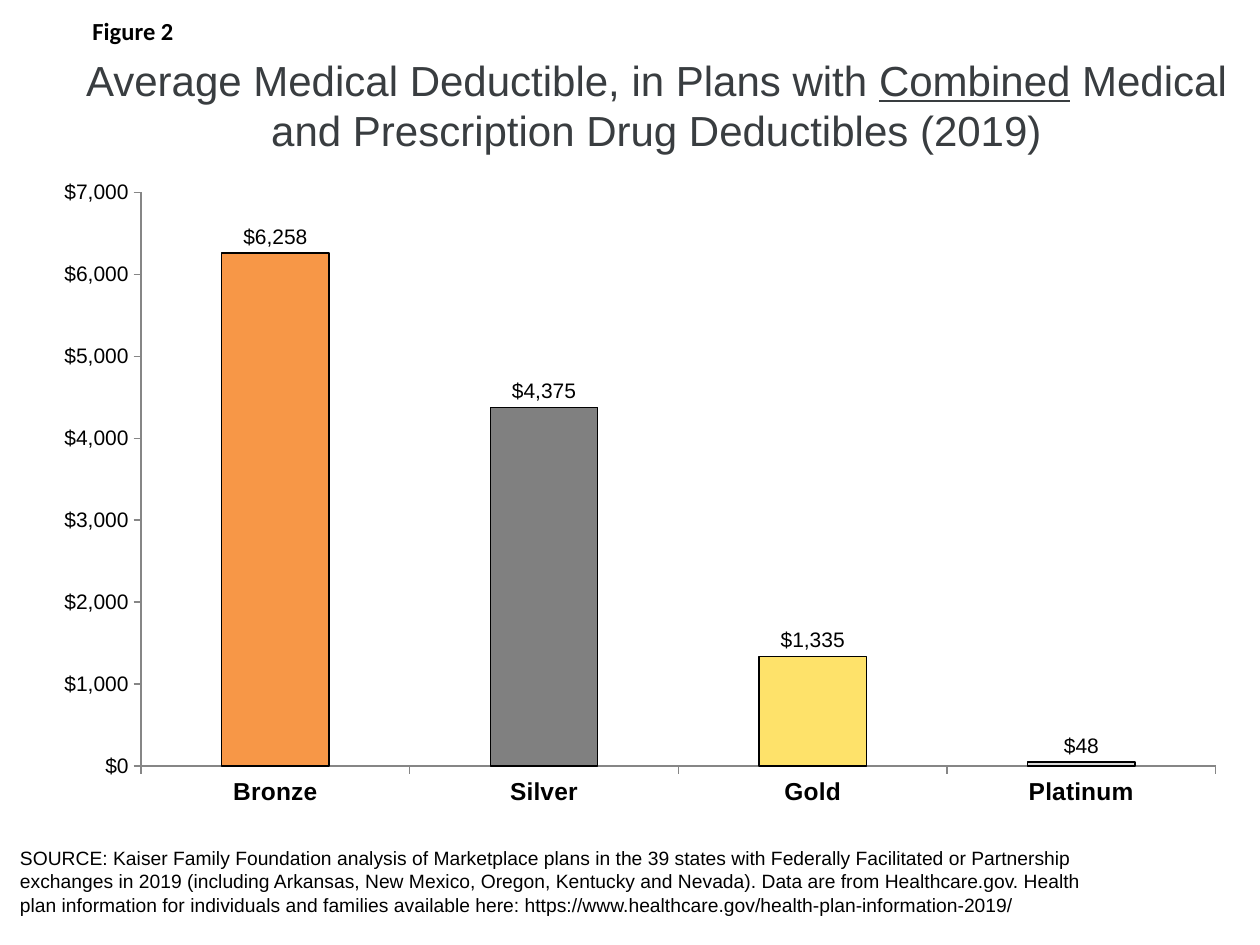
from lxml import etree
from pptx import Presentation
from pptx.chart.data import CategoryChartData as Data
from pptx.dml.color import RGBColor as RGB
from pptx.enum.chart import XL_CHART_TYPE as Kind, XL_LABEL_POSITION as Spot
from pptx.enum.chart import XL_TICK_MARK as Tick
from pptx.enum.text import MSO_ANCHOR as Anchor, PP_ALIGN as Align
from pptx.oxml.ns import qn
from pptx.util import Inches, Pt

COLORS = {"text": "000000", "title": "393D40", "axis": "868686", "bars": "082338"}
METALS = {
    "Bronze": (6258, "F79747"),
    "Silver": (4375, "808080"),
    "Gold": (1335, "FEE26A"),
    "Platinum": (48, "D9D9D9"),
}
MONEY = '"$"#,##0'


def style(font, size, color="text", name="Arial", bold=False):
    for key, value in {"size": Pt(size), "name": name, "bold": bold}.items():
        setattr(font, key, value)
    font.color.rgb = RGB.from_string(COLORS[color])


def place(shape, *box):
    for key, value in zip(("left", "top", "width", "height"), box):
        setattr(shape, key, Inches(value))


prs = Presentation()
prs.slide_width, prs.slide_height = Inches(10), Inches(7.5)
slide = prs.slides.add_slide(prs.slide_layouts[5])

title = slide.shapes.title
place(title, 0.52, 0.33, 9.38, 1)
title.text_frame.vertical_anchor = Anchor.MIDDLE
para = title.text_frame.paragraphs[0]
para.alignment = Align.CENTER
for words, under in (
    ("Average Medical Deductible, in Plans with ", False),
    ("Combined", True),
    (" Medical and Prescription Drug Deductibles (2019)", False),
):
    run = para.add_run()
    run.text = words
    style(run.font, 24, "title")
    run.font.underline = under

data = Data(number_format=MONEY)
data.categories = list(METALS)
data.add_series("Series 1", [value for value, _ in METALS.values()])
box = [Inches(n) for n in (0.33, 1.33, 9.52, 5.17)]
chart = slide.shapes.add_chart(Kind.COLUMN_CLUSTERED, *box, data).chart
chart.has_legend = chart.has_title = False
style(chart.font, 18)

for axis, size, bold in ((chart.category_axis, 14, True), (chart.value_axis, 12, False)):
    axis.has_major_gridlines = False
    axis.major_tick_mark = Tick.OUTSIDE
    axis.minor_tick_mark = Tick.NONE
    axis.format.line.color.rgb = RGB.from_string(COLORS["axis"])
    axis.format.line.width = Pt(0.75)
    style(axis.tick_labels.font, size, bold=bold)
scale = chart.value_axis
scale.minimum_scale, scale.maximum_scale, scale.major_unit = 0, 7000, 1000
scale.tick_labels.number_format = MONEY
scale.tick_labels.number_format_is_linked = False

plot = chart.plots[0]
plot.gap_width = 150
plot.vary_by_categories = False
bars = plot.series[0]
bars.format.fill.solid()
bars.format.fill.fore_color.rgb = RGB.from_string(COLORS["bars"])
for i, (_, color) in enumerate(METALS.values()):
    form = bars.points[i].format
    form.fill.solid()
    form.fill.fore_color.rgb = RGB.from_string(color)
    form.line.color.rgb = RGB.from_string(COLORS["text"])
    form.line.width = Pt(0.75)
labels = bars.data_labels
labels.show_value = True
labels.position = Spot.OUTSIDE_END
labels.number_format = MONEY
labels.number_format_is_linked = False
style(labels.font, 12)

area = chart._chartSpace.chart.plotArea
for old in area.findall(qn("c:layout")):
    area.remove(old)
layout = etree.Element(qn("c:layout"))
area.insert(0, layout)
manual = etree.SubElement(layout, qn("c:manualLayout"))
for tag, value in {
    "layoutTarget": "inner", "xMode": "edge", "yMode": "edge",
    "x": "0.083", "y": "0.038", "w": "0.896", "h": "0.881",
}.items():
    etree.SubElement(manual, qn("c:" + tag)).set("val", value)

source = (
    "SOURCE: Kaiser Family Foundation analysis of Marketplace plans in the 39 states "
    "with Federally Facilitated or Partnership exchanges in 2019 (including Arkansas, "
    "New Mexico, Oregon, Kentucky and Nevada). Data are from Healthcare.gov. Health plan "
    "information for individuals and families available here: "
    "https://www.healthcare.gov/health-plan-information-2019/"
)
for words, spot, size, name, bold, align in (
    (source, (0.06, 6.67, 8.78, 0.66), 11, "Arial", False, Align.LEFT),
    ("Figure 2", (0.18, 0.08, 1.75, 0.34), 14, "Calibri", True, Align.CENTER),
):
    note = slide.shapes.add_textbox(*[Inches(n) for n in spot])
    note.text_frame.word_wrap = True
    para = note.text_frame.paragraphs[0]
    para.alignment = align
    run = para.add_run()
    run.text = words
    style(run.font, size, name=name, bold=bold)

prs.save("out.pptx")
